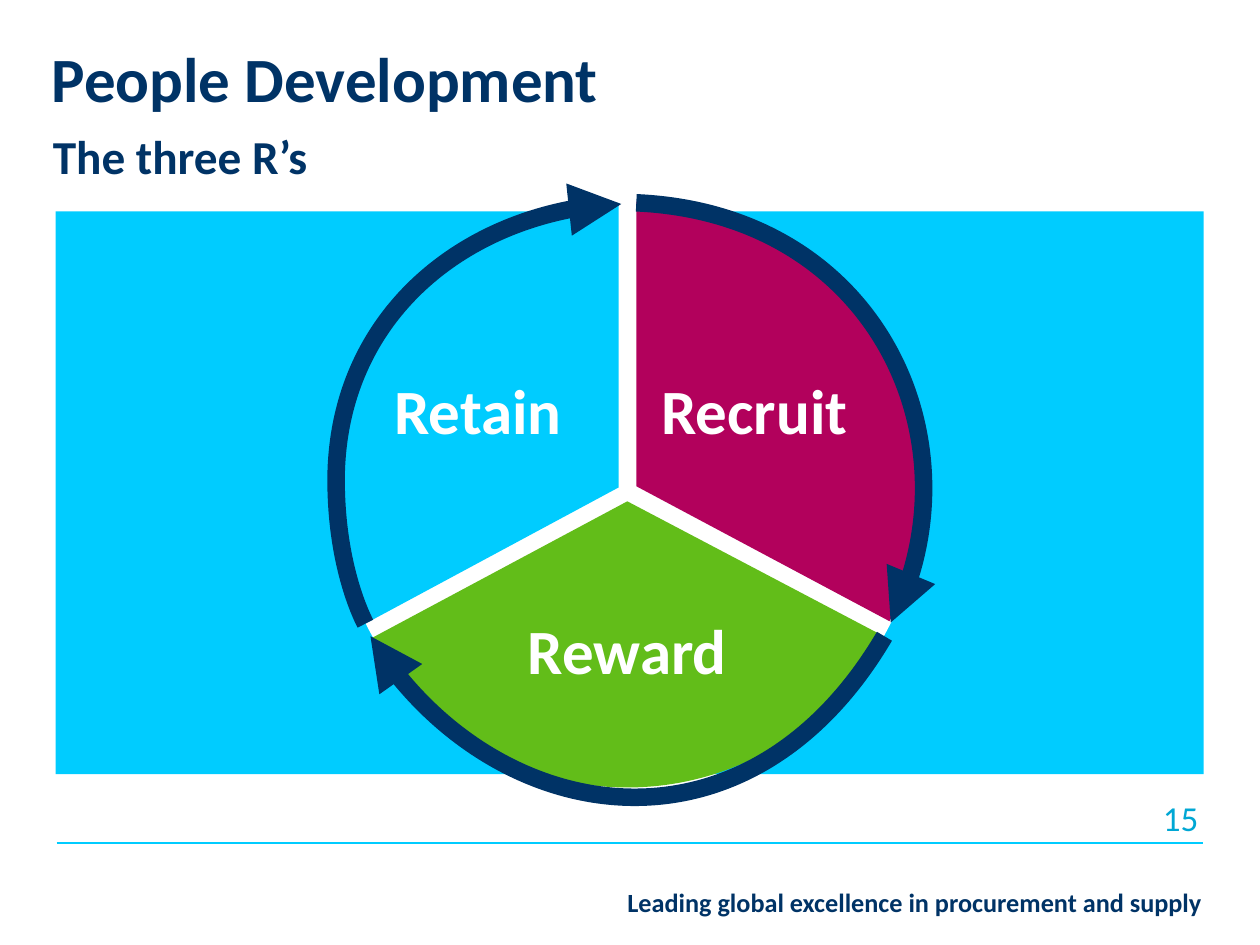
from lxml.etree import SubElement
from pptx import Presentation
from pptx.dml.color import RGBColor
from pptx.enum.shapes import MSO_CONNECTOR, MSO_SHAPE
from pptx.enum.text import MSO_ANCHOR as Anchor, MSO_AUTO_SIZE as AutoSize, PP_ALIGN as Align
from pptx.oxml.ns import qn
from pptx.util import Pt

NAVY, CYAN, TEAL, WHITE = "003366", "00CCFF", "00A7D4", "FFFFFF"
TITLE = "People Development"
SUBTITLE = "The three R’s"
TAGLINE = "Leading global excellence in procurement and supply"
PAGE = "15"
CURVE_STEPS = 24

# Each curve is a start point followed by cubic Bézier triples.
SECTORS = [
    {"name": "Reward", "colour": "62BD19", "apex": (358.5, 286.5),
     "edge": [(505, 363.6), (476, 414.7), (421.2, 450), (358.5, 450),
              (295.9, 450), (241.2, 415.4), (213.1, 364.3)],
     "arrow": [(505.4, 363.6), (431.3, 489.5), (277.9, 474), (211.7, 363.6)],
     "label": (293, 349.2, 131, 49.7), "align": Align.CENTER},
    {"name": "Recruit", "colour": "B2015C", "apex": (363.6, 277.9),
     "edge": [(363.6, 115.2), (453.6, 118.1), (525.6, 191.5), (525.6, 281.5),
              (525.6, 308.2), (519.1, 333.4), (508.3, 355)],
     "arrow": [(363.6, 115.9), (492.5, 121.7), (562.3, 256.3), (509, 355.7)],
     "label": (378, 212.4, 113, 46), "align": Align.LEFT},
    {"name": "Retain", "colour": CYAN, "apex": (353.5, 278.6),
     "edge": [(208.8, 356.4), (198, 334), (192.2, 309.6), (192.2, 283),
              (192.2, 192.2), (263.5, 118.8), (353.5, 115.9)],
     "arrow": [(208.8, 356.4), (208.1, 355), (193.7, 328.3), (192.2, 282.2),
               (188.6, 193), (265, 118.1), (355, 116.6)],
     "label": (216.7, 212.4, 113, 39.6), "align": Align.CENTER},
]


def rgb(value):
    return RGBColor.from_string(value)


def apply(target, values):
    for name, value in values.items():
        setattr(target, name, value)


def place(shape, box):
    apply(shape, dict(zip(("left", "top", "width", "height"), map(Pt, box))))


def write(shape, text, size, colour, bold=True, align=Align.LEFT,
          anchor=Anchor.TOP, insets=(0, 0, 0, 0), line_spacing=None):
    """Insets run left, top, right, bottom."""
    left, top, right, bottom = map(Pt, insets)
    frame = shape.text_frame
    apply(frame, {"word_wrap": True, "auto_size": AutoSize.NONE, "vertical_anchor": anchor,
                  "margin_left": left, "margin_top": top,
                  "margin_right": right, "margin_bottom": bottom})
    frame.text = text
    paragraph = frame.paragraphs[0]
    apply(paragraph, {"alignment": align, "space_before": Pt(0)})
    if line_spacing:
        paragraph.line_spacing = Pt(line_spacing)
    font = paragraph.runs[0].font
    apply(font, {"name": "Calibri", "size": Pt(size), "bold": bold})
    font.color.rgb = rgb(colour)
    return paragraph


def add_text(slide, box, *content, **layout):
    write(slide.shapes.add_textbox(*map(Pt, box)), *content, **layout)


def add_flat(slide, kind, box, colour):
    shape = slide.shapes.add_shape(kind, *map(Pt, box))
    fill_flat(shape, colour)
    return shape


def fill_flat(shape, colour):
    shape.shadow.inherit = False
    shape.fill.solid()
    shape.fill.fore_color.rgb = rgb(colour)
    shape.line.fill.background()


def trace(curve):
    """Points along a chain of cubic Bézier curves, for its true extents."""
    points = [curve[0]]
    for i in range(0, len(curve) - 1, 3):
        corners = curve[i:i + 4]
        for step in range(1, CURVE_STEPS + 1):
            t = step / CURVE_STEPS
            weights = ((1 - t) ** 3, 3 * t * (1 - t) ** 2, 3 * t * t * (1 - t), t ** 3)
            points.append(tuple(sum(w * corner[axis] for w, corner in zip(weights, corners))
                                for axis in (0, 1)))
    return points


def add_curve(slide, curve, apex=None):
    """An open curve, or a closed wedge when an apex is given."""
    tip = [apex] if apex else []
    start, *rest = [(Pt(x), Pt(y)) for x, y in tip + trace(curve)]
    builder = slide.shapes.build_freeform(*start)
    builder.add_line_segments(rest, close=False)
    shape = builder.convert_to_shape()

    outline = next(shape._element.iter(qn("a:path")))
    for command in list(outline):
        outline.remove(command)
    commands = [("a:moveTo", tip), ("a:lnTo", curve[:1])] if apex else [("a:moveTo", curve[:1])]
    commands += [("a:cubicBezTo", curve[i:i + 3]) for i in range(1, len(curve), 3)]
    for tag, points in commands:
        command = SubElement(outline, qn(tag))
        for x, y in points:
            SubElement(command, qn("a:pt"), x=str(Pt(x) - shape.left), y=str(Pt(y) - shape.top))
    if apex:
        SubElement(outline, qn("a:close"))
    return shape


def add_arrow(slide, curve):
    arrow = add_curve(slide, curve)
    arrow.shadow.inherit = False
    arrow.fill.background()
    arrow.line.width = Pt(10)
    arrow.line.color.rgb = rgb(NAVY)
    SubElement(arrow.line._get_or_add_ln(), qn("a:tailEnd"), type="triangle")


def add_frame(slide):
    rule = slide.shapes.add_connector(MSO_CONNECTOR.STRAIGHT, Pt(32.4), Pt(481.7), Pt(687.6), Pt(481.7))
    rule.line.color.rgb = rgb(CYAN)
    rule.line.width = Pt(1)
    SubElement(rule._element.spPr, qn("a:effectLst"))
    tagline = add_flat(slide, MSO_SHAPE.RECTANGLE, (253.4, 502.6, 440.6, 25.2), WHITE)
    write(tagline, TAGLINE, 15, NAVY, align=Align.RIGHT, insets=(7.2, 3.6, 7.2, 3.6))
    add_text(slide, (635.8, 457.9, 49, 24.5), PAGE, 20, TEAL, bold=False,
             align=Align.RIGHT, anchor=Anchor.MIDDLE, insets=(0, 0, 0, 5.8))


def add_headings(slide):
    title, body = slide.shapes.title, slide.placeholders[1]
    place(title, (29.5, 29.5, 656, 46.8))
    write(title, TITLE, 36, NAVY, line_spacing=36)
    place(body, (30.2, 76.3, 656.6, 34.6))
    paragraph = write(body, SUBTITLE, 27, NAVY, insets=(0, 0, 0, 2.9), line_spacing=29)
    properties = paragraph._p.get_or_add_pPr()
    properties.set("marL", "0")
    properties.set("indent", "0")
    SubElement(properties, qn("a:buNone"))


def add_cycle(slide):
    add_flat(slide, MSO_SHAPE.RECTANGLE, (31.8, 120.8, 656.1, 321.6), CYAN)
    add_flat(slide, MSO_SHAPE.OVAL, (191.5, 114.5, 334.8, 334.8), WHITE)
    for sector in SECTORS:
        fill_flat(add_curve(slide, sector["edge"], sector["apex"]), sector["colour"])
    for sector in SECTORS:
        add_arrow(slide, sector["arrow"])
    for sector in SECTORS:
        add_text(slide, sector["label"], sector["name"], 36, WHITE, align=sector["align"])


def main():
    presentation = Presentation()
    apply(presentation, {"slide_width": Pt(720), "slide_height": Pt(540)})
    slide = presentation.slides.add_slide(presentation.slide_layouts[1])
    add_frame(slide)
    add_headings(slide)
    add_cycle(slide)
    presentation.save("out.pptx")


if __name__ == "__main__":
    main()
